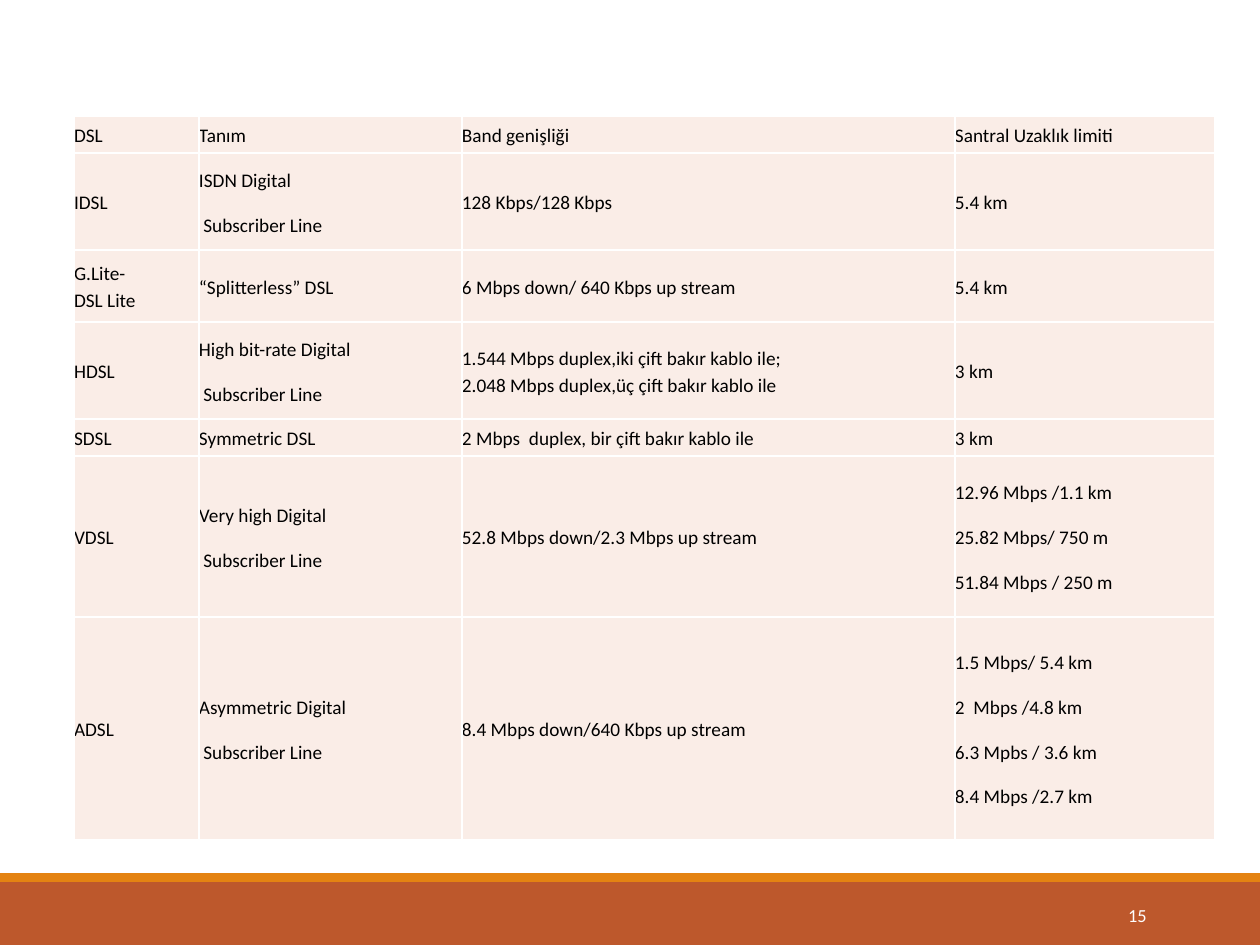
from lxml import etree
from pptx import Presentation
from pptx import util as u
from pptx.dml import color
from pptx.enum import shapes, text
from pptx.oxml import ns

SCALE = 914400 / 126


def px(length):
    return u.Emu(round(length * SCALE))


def paint(target, hex_colour):
    target.solid()
    target.fore_color.rgb = color.RGBColor.from_string(hex_colour)


deck = Presentation()
deck.slide_width, deck.slide_height = px(1260), px(945)
page = deck.slides.add_slide(deck.slide_layouts[6])

for top, height, fill in [(882, 63, "BD582C"), (873, 9, "E48312")]:
    bar = page.shapes.add_shape(shapes.MSO_SHAPE.RECTANGLE, 0, px(top), px(1260), px(height))
    bar.shadow.inherit = False
    bar.line.fill.background()
    paint(bar.fill, fill)

widths = [125, 263, 493, 260]
heights = [37, 97, 72, 97, 37, 161, 223]
subscriber = " Subscriber Line"
rows = [
    [["DSL"], ["Tanım"], ["Band genişliği"], ["Santral Uzaklık limiti"]],
    [["IDSL"], ["ISDN Digital", subscriber], ["128 Kbps/128 Kbps"], ["5.4 km"]],
    [["G.Lite-\nDSL Lite"], ["“Splitterless” DSL"], ["6 Mbps down/ 640 Kbps up stream"], ["5.4 km"]],
    [["HDSL"], ["High bit-rate Digital", subscriber],
     ["1.544 Mbps duplex,iki çift bakır kablo ile;\n2.048 Mbps duplex,üç çift bakır kablo ile"], ["3 km"]],
    [["SDSL"], ["Symmetric DSL"], ["2 Mbps  duplex, bir çift bakır kablo ile"], ["3 km"]],
    [["VDSL"], ["Very high Digital", subscriber], ["52.8 Mbps down/2.3 Mbps up stream"],
     ["12.96 Mbps /1.1 km", "25.82 Mbps/ 750 m", "51.84 Mbps / 250 m"]],
    [["ADSL"], ["Asymmetric Digital", subscriber], ["8.4 Mbps down/640 Kbps up stream"],
     ["1.5 Mbps/ 5.4 km", "2  Mbps /4.8 km", "6.3 Mpbs / 3.6 km", "8.4 Mbps /2.7 km"]],
]

table = page.shapes.add_table(
    len(rows), len(widths), px(74), px(116), px(sum(widths)), px(sum(heights))).table
for column, width in zip(table.columns, widths):
    column.width = px(width)
for row, height in zip(table.rows, heights):
    row.height = px(height)

for row, contents in zip(table.rows, rows):
    for cell, paragraphs in zip(row.cells, contents):
        cell.margin_left = cell.margin_right = cell.margin_top = cell.margin_bottom = 0
        cell.vertical_anchor = text.MSO_ANCHOR.MIDDLE
        properties = cell._tc.get_or_add_tcPr()
        for side in ["lnL", "lnR", "lnT", "lnB"]:
            border = etree.SubElement(properties, ns.qn(f"a:{side}"), w=str(u.Pt(1)))
            border_fill = etree.SubElement(border, ns.qn("a:solidFill"))
            etree.SubElement(border_fill, ns.qn("a:srgbClr"), val="FFFFFF")
        paint(cell.fill, "FAEDE7")
        for index, content in enumerate(paragraphs):
            frame = cell.text_frame
            para = frame.add_paragraph() if index else frame.paragraphs[0]
            para.line_spacing = 1.15
            para.space_after = u.Pt(10)
            for number, line in enumerate(content.split("\n")):
                if number:
                    para.add_line_break()
                span = para.add_run()
                span.text = line
                span.font.name = "Calibri"
                span.font.size = u.Pt(11)
                span.font.bold = False
                paint(span.font.fill, "000000")

box = page.shapes.add_textbox(px(1023), px(890), px(136), px(50))
box.text_frame.word_wrap = True
box.text_frame.vertical_anchor = text.MSO_ANCHOR.MIDDLE
para = box.text_frame.paragraphs[0]
para.alignment = text.PP_ALIGN.RIGHT
span = para.add_run()
span.text = "15"
span.font.name = "Calibri"
span.font.size = u.Pt(10.5)
paint(span.font.fill, "FFFFFF")

deck.save("out.pptx")
